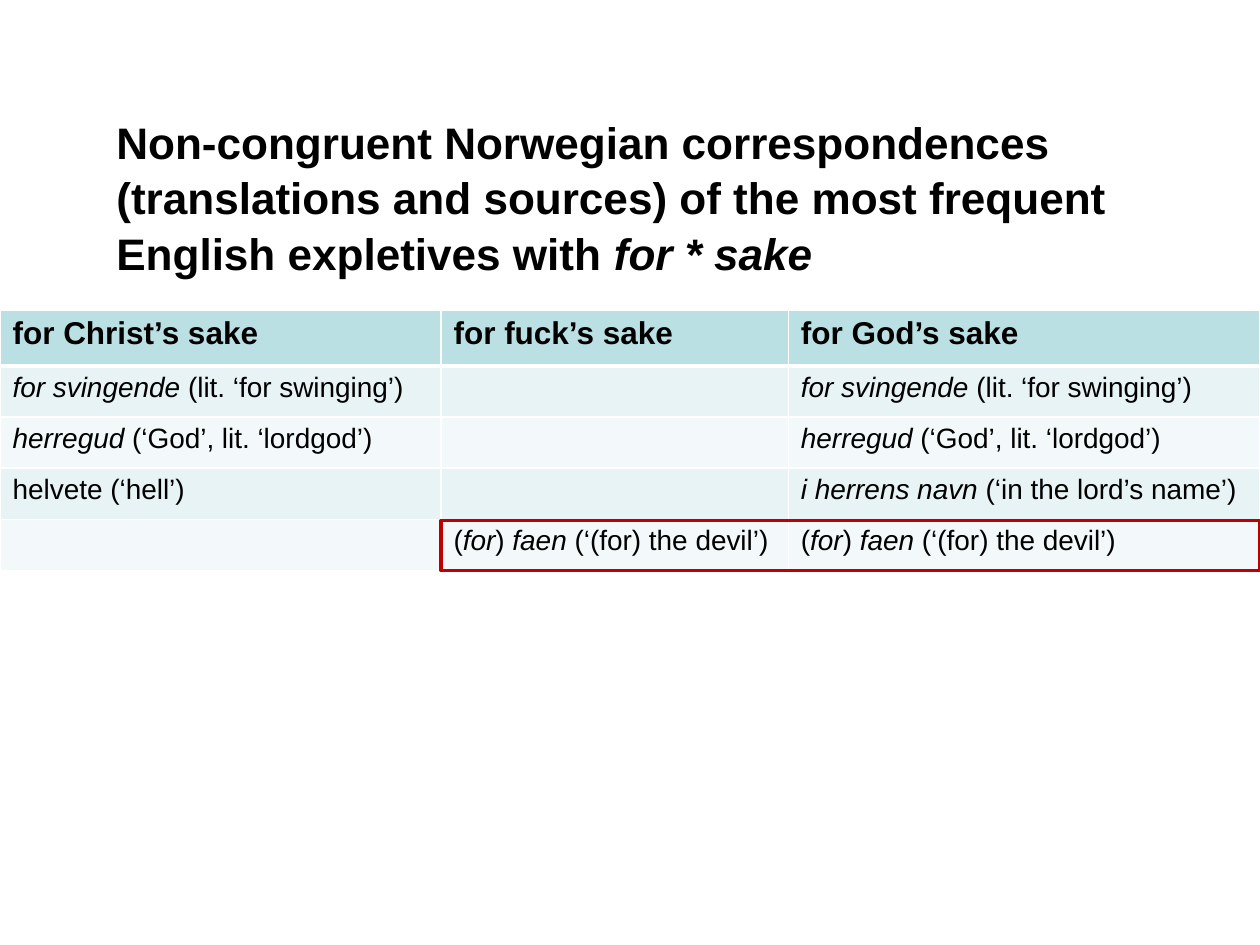
from lxml.etree import SubElement
from pptx import Presentation
from pptx.dml.color import RGBColor
from pptx.enum.shapes import MSO_SHAPE
from pptx.enum.text import MSO_ANCHOR
from pptx.oxml.ns import qn
from pptx.util import Pt

COLUMN_WIDTHS = [252, 198.5, 269.5]
HEADER_HEIGHT, ROW_HEIGHT = 32, 29.2
TABLE_TOP = 177.2

# Underscores enclose italic words.
DEVIL = "(_for_)_ faen _(‘(for) the devil’)"
SWINGING = "_for svingende _(lit. ‘for swinging’)"
LORDGOD = "_herregud_ (‘God’, lit. ‘lordgod’)"
CORRESPONDENCES = [
    ["for Christ’s sake", "for fuck’s sake", "for God’s sake"],
    [SWINGING, "", SWINGING],
    [LORDGOD, "", LORDGOD],
    ["helvete (‘hell’)", "", "_i herrens navn_ (‘in the lord’s name’)"],
    ["", DEVIL, DEVIL],
]


def color(hex_code):
    return RGBColor.from_string(hex_code)


class SlideBuilder:
    font = "Arial"
    ink = "000000"
    header_fill = "BBE0E3"
    band_fills = ["F3F9FA", "E7F3F4"]
    grid = "FFFFFF"
    accent = "C00000"

    def __init__(self, slide):
        self.slide = slide

    def add_wording(self, paragraph, marked, size, bold=False):
        """Add the text, with parts between underscores in italics."""
        paragraph.font.name = self.font
        paragraph.font.size = Pt(size)
        paragraph.font.bold = bold
        paragraph.font.color.rgb = color(self.ink)
        for index, part in enumerate(marked.split("_")):
            if part:
                run = paragraph.add_run()
                run.text = part
                if index % 2:
                    run.font.italic = True

    def title(self, marked, left, top, width, height):
        heading = self.slide.shapes.add_textbox(
            Pt(left), Pt(top), Pt(width), Pt(height))
        frame = heading.text_frame
        frame.word_wrap = True
        frame.vertical_anchor = MSO_ANCHOR.MIDDLE
        frame.margin_left = frame.margin_right = Pt(6.5)
        frame.margin_top = frame.margin_bottom = Pt(3)
        frame.paragraphs[0].line_spacing = 1.05
        self.add_wording(frame.paragraphs[0], marked, 25.2, bold=True)

    def border(self, cell, side, width):
        line = SubElement(cell._tc.get_or_add_tcPr(), qn(f"a:{side}"),
                          w=str(Pt(width)))
        fill = SubElement(line, qn("a:solidFill"))
        SubElement(fill, qn("a:srgbClr"), val=self.grid)

    def table(self, rows, left, top, widths, heights):
        table = self.slide.shapes.add_table(
            len(rows), len(widths), Pt(left), Pt(top),
            Pt(sum(widths)), Pt(sum(heights))).table
        table.first_row = table.horz_banding = False
        for column, width in zip(table.columns, widths):
            column.width = Pt(width)
        for r, (row, height) in enumerate(zip(rows, heights)):
            table.rows[r].height = Pt(height)
            header = r == 0
            for c, marked in enumerate(row):
                cell = table.cell(r, c)
                for side in ("lnL", "lnR", "lnT", "lnB"):
                    heavy = (r, side) in ((0, "lnB"), (1, "lnT"))
                    self.border(cell, side, 3 if heavy else 1)
                cell.fill.solid()
                cell.fill.fore_color.rgb = color(
                    self.header_fill if header else self.band_fills[r % 2])
                self.add_wording(cell.text_frame.paragraphs[0], marked,
                                 18 if header else 16, bold=header)

    def frame(self, left, top, width, height):
        outline = self.slide.shapes.add_shape(
            MSO_SHAPE.RECTANGLE, Pt(left), Pt(top), Pt(width), Pt(height))
        outline.shadow.inherit = False
        outline.fill.background()
        outline.line.color.rgb = color(self.accent)
        outline.line.width = Pt(2)


def main():
    deck = Presentation()
    deck.slide_width, deck.slide_height = Pt(720), Pt(540)
    builder = SlideBuilder(deck.slides.add_slide(deck.slide_layouts[6]))

    builder.title(
        "Non-congruent Norwegian correspondences (translations and sources) "
        "of the most frequent English expletives with _for * sake_",
        60, 67, 623.5, 90)
    heights = [HEADER_HEIGHT] + [ROW_HEIGHT] * (len(CORRESPONDENCES) - 1)
    builder.table(CORRESPONDENCES, 0, TABLE_TOP, COLUMN_WIDTHS, heights)
    builder.frame(COLUMN_WIDTHS[0], 297.5, sum(COLUMN_WIDTHS[1:]), 28.5)
    deck.save("out.pptx")


if __name__ == "__main__":
    main()
